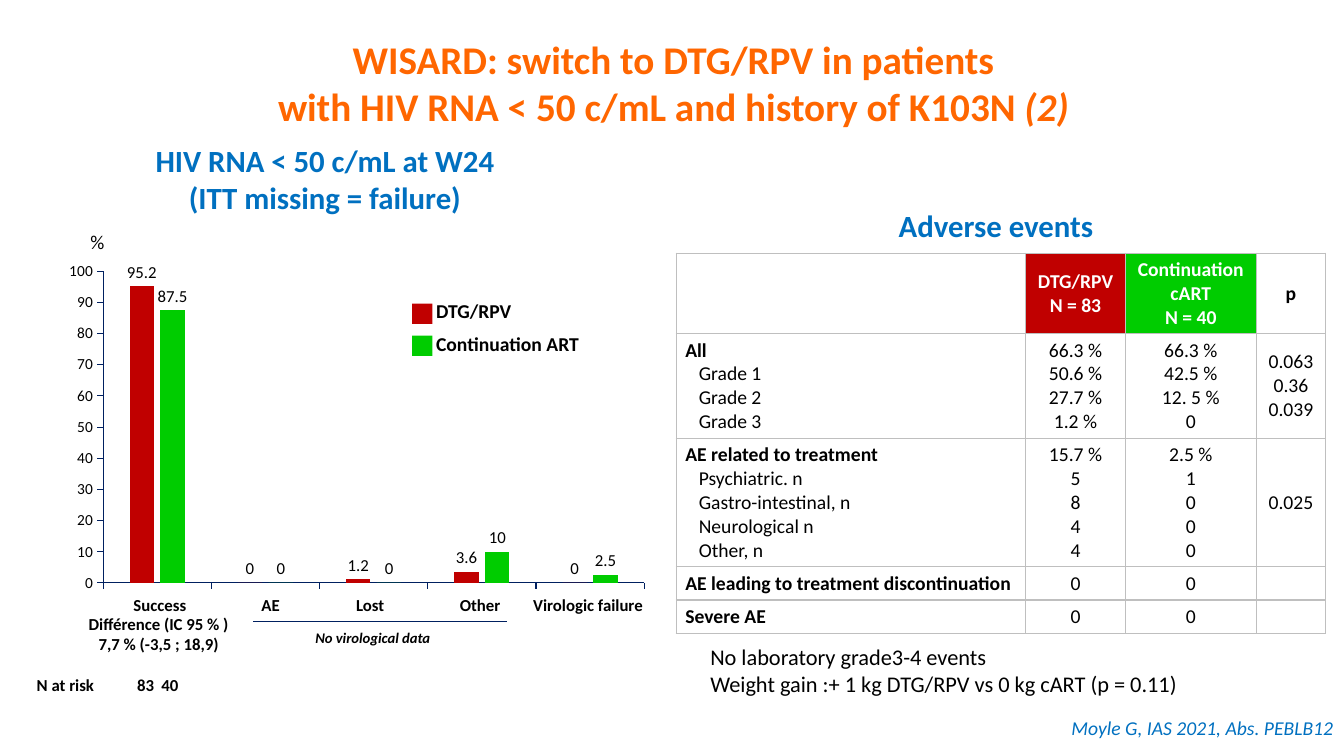
from lxml import etree
from pptx import Presentation
from pptx.chart.data import CategoryChartData
from pptx.dml.color import RGBColor
from pptx.enum.chart import XL_CHART_TYPE, XL_LABEL_POSITION, XL_TICK_LABEL_POSITION, XL_TICK_MARK
from pptx.enum.shapes import MSO_CONNECTOR, MSO_SHAPE
from pptx.enum.text import MSO_ANCHOR, PP_ALIGN
from pptx.oxml import parse_xml
from pptx.oxml.ns import nsdecls, qn
from pptx.util import Cm, Pt

LEFT, MID, RIGHT = PP_ALIGN.LEFT, PP_ALIGN.CENTER, PP_ALIGN.RIGHT
MIDDLE = MSO_ANCHOR.MIDDLE
COLUMN = XL_CHART_TYPE.COLUMN_CLUSTERED
ABOVE = XL_LABEL_POSITION.OUTSIDE_END
HIDE = XL_TICK_LABEL_POSITION.NONE
OUT = XL_TICK_MARK.OUTSIDE
RECT, LINE = MSO_SHAPE.RECTANGLE, MSO_CONNECTOR.STRAIGHT


class Theme:
    font = "Calibri"
    black = RGBColor(0, 0, 0)
    white = RGBColor(255, 255, 255)
    orange = RGBColor(0xFF, 0x66, 0x00)
    blue = RGBColor(0x00, 0x70, 0xC0)
    navy = RGBColor(0x00, 0x20, 0x60)
    red = RGBColor(0xC0, 0, 0)
    green = RGBColor(0, 0xCC, 0)
    grid = "BFBFBF"
    title, head, note, body, small, tick, tiny = 28, 22, 16, 14, 12, 11, 10.5


def style(font, size, color=Theme.black, bold=False, italic=False):
    font.name, font.size = Theme.font, Pt(size)
    font.color.rgb, font.bold, font.italic = color, bold, italic


def write(x, y, w, h, words, size, color=Theme.black, bold=False, italic=False, align=MID):
    box = slide.shapes.add_textbox(Cm(x), Cm(y), Cm(w), Cm(h))
    frame = box.text_frame
    frame.word_wrap = False
    frame.text = words
    for para in frame.paragraphs:
        para.alignment = align
        style(para.font, size, color, bold, italic)
    return frame


deck = Presentation()
deck.slide_width, deck.slide_height = Cm(33.87), Cm(19.05)
slide = deck.slides.add_slide(deck.slide_layouts[6])

# Title
frame = write(5.21, 0.03, 23.52, 4.11, "WISARD: switch to DTG/RPV in patients",
              Theme.title, Theme.orange, bold=True)
frame.vertical_anchor = MIDDLE
para = frame.paragraphs[0]
para.add_line_break()
para.add_run().text = "with HIV RNA < 50 c/mL and history of K103N "
run = para.add_run()
run.text = "(2)"
run.font.italic = True

# Headings, notes and citation
write(0.61, 3.45, 15.16, 2.13, "HIV RNA < 50 c/mL at W24\n(ITT missing = failure)",
      Theme.head, Theme.blue, bold=True)
write(22.4, 5.08, 5.46, 1.19, "Adverse events", Theme.head, Theme.blue, bold=True, align=LEFT)
write(17.65, 16.08, 12.42, 1.63,
      "No laboratory grade3-4 events\nWeight gain :+ 1 kg DTG/RPV vs 0 kg cART (p = 0.11)",
      Theme.note, align=LEFT)
write(26.7, 17.91, 7.16, 0.86, "Moyle G, IAS 2021, Abs. PEBLB12",
      Theme.body, Theme.blue, italic=True, align=RIGHT)

# Adverse events table: the first line of each row label is bold
rows = [
    ("", "DTG/RPV\nN = 83", "Continuation\ncART\nN = 40", "p"),
    ("All\nGrade 1\nGrade 2\nGrade 3", "66.3 %\n50.6 %\n27.7 %\n1.2 %",
     "66.3 %\n42.5 %\n12. 5 %\n0", "0.063\n0.36\n0.039"),
    ("AE related to treatment\nPsychiatric. n\nGastro-intestinal, n\nNeurological n\nOther, n",
     "15.7 %\n5\n8\n4\n4", "2.5 %\n1\n0\n0\n0", "0.025"),
    ("AE leading to treatment discontinuation", "0", "0", ""),
    ("Severe AE", "0", "0", ""),
]
wide = [8.81, 2.51, 3.3, 1.75]
high = [2.03, 2.64, 3.23, 0.84, 0.84]
table = slide.shapes.add_table(len(rows), len(wide), Cm(17.04), Cm(6.38),
                               Cm(sum(wide)), Cm(sum(high))).table
table.first_row = table.horz_banding = False
for col, size in zip(table.columns, wide):
    col.width = Cm(size)
for row, size in zip(table.rows, high):
    row.height = Cm(size)
heads = {1: Theme.red, 2: Theme.green}
for r, row in enumerate(rows):
    for c, words in enumerate(row):
        cell = table.cell(r, c)
        cell.text = words
        cell.vertical_anchor = MIDDLE
        cell.margin_left = cell.margin_right = Cm(0.23)
        cell.margin_top = cell.margin_bottom = Cm(0.11)
        tint = heads.get(c) if r == 0 else None
        for i, para in enumerate(cell.text_frame.paragraphs):
            para.alignment = MID if c else LEFT
            if c == 0 and i:
                para._p.get_or_add_pPr().set("marL", str(Cm(0.34)))
            style(para.font, Theme.body, Theme.white if tint else Theme.black,
                  bold=r == 0 or (c == 0 and i == 0))
            if not words:
                etree.SubElement(para._p, qn("a:endParaRPr"), sz=str(Theme.body * 100))
        for side in "LRTB":
            cell._tc.get_or_add_tcPr().append(parse_xml(
                f'<a:ln{side} {nsdecls("a")} w="{Pt(1)}"><a:solidFill>'
                f'<a:srgbClr val="{Theme.grid}"/></a:solidFill></a:ln{side}>'))
        cell.fill.solid()
        cell.fill.fore_color.rgb = tint or Theme.white

# Response chart
data = CategoryChartData()
data.categories = ["Success", "AE", "Lost", "Other", "Virologic failure"]
data.add_series("DTG/RPV", (95.2, 0, 1.2, 3.6, 0))
data.add_series("Continuation ART", (87.5, 0, 0, 10, 2.5))
chart = slide.shapes.add_chart(COLUMN, Cm(1.45), Cm(6.43), Cm(15.09), Cm(9.22), data).chart
chart.has_legend = chart.has_title = False
style(chart.font, Theme.small)
plot = chart.plots[0]
plot.gap_width, plot.overlap, plot.vary_by_categories = 219, -27, False
for series, color in zip(plot.series, (Theme.red, Theme.green)):
    series.format.fill.solid()
    series.format.fill.fore_color.rgb = color
    labels = series.data_labels
    labels.show_value, labels.position = True, ABOVE
    style(labels.font, Theme.small)
scale = chart.value_axis
scale.minimum_scale, scale.maximum_scale, scale.major_unit = 0, 100, 10
scale.has_major_gridlines = False
style(scale.tick_labels.font, Theme.tick)
chart.category_axis.tick_label_position = HIDE
for axis in (scale, chart.category_axis):
    axis.major_tick_mark = OUT
    axis.format.line.color.rgb = Theme.navy
    axis.format.line.width = Pt(0.75)

# Fixed plot area, so that the labels below line up
area = chart._chartSpace.chart.plotArea
for old in area.findall(qn("c:layout")):
    area.remove(old)
spots = "".join(f'<c:{tag} val="{val}"/>' for tag, val in (
    ("layoutTarget", "inner"), ("xMode", "edge"), ("yMode", "edge"),
    ("x", 0.076), ("y", 0.044), ("w", 0.904), ("h", 0.852)))
area.insert(0, parse_xml(
    f'<c:layout {nsdecls("c")}><c:manualLayout>{spots}</c:manualLayout></c:layout>'))

# Labels around the chart: centre, top, width, words
for mid, top, w, words in (
    (4.03, 14.86, 1.85, "Success"), (6.82, 14.86, 1, "AE"), (9.33, 14.86, 1.24, "Lost"),
    (12.1, 14.86, 1.55, "Other"), (14.82, 14.86, 3.33, "Virologic failure"),
    (4, 15.34, 4.09, "Différence (IC 95 % )\n7,7 % (-3,5 ; 18,9)"),
    (1.65, 16.87, 1.98, "N at risk"), (3.67, 16.87, 1, "83"), (4.28, 16.87, 1, "40"),
):
    write(mid - w / 2, top, w, 0.76, words, Theme.small, bold=True)
write(2.03, 5.66, 0.86, 0.86, "%", Theme.body, align=LEFT)

# Bracket for missing data
rule = slide.shapes.add_connector(LINE, Cm(6.38), Cm(15.67), Cm(12.78), Cm(15.67))
rule.line.color.rgb, rule.line.width = Theme.navy, Pt(0.75)
etree.SubElement(rule._element.spPr, qn("a:effectLst"))
write(7.67, 15.72, 3.45, 0.71, "No virological data", Theme.tiny, bold=True, italic=True)

# Legend
for i, (name, color, w) in enumerate((("DTG/RPV", Theme.red, 2.41),
                                      ("Continuation ART", Theme.green, 4.14))):
    top = 7.42 + 0.81 * i
    key = slide.shapes.add_shape(RECT, Cm(10.39), Cm(top + 0.23), Cm(0.51), Cm(0.51))
    key.shadow.inherit = False
    key.fill.solid()
    key.fill.fore_color.rgb = color
    key.line.fill.background()
    write(10.74, top, w, 0.86, name, Theme.body, bold=True, align=LEFT)

deck.save("out.pptx")
